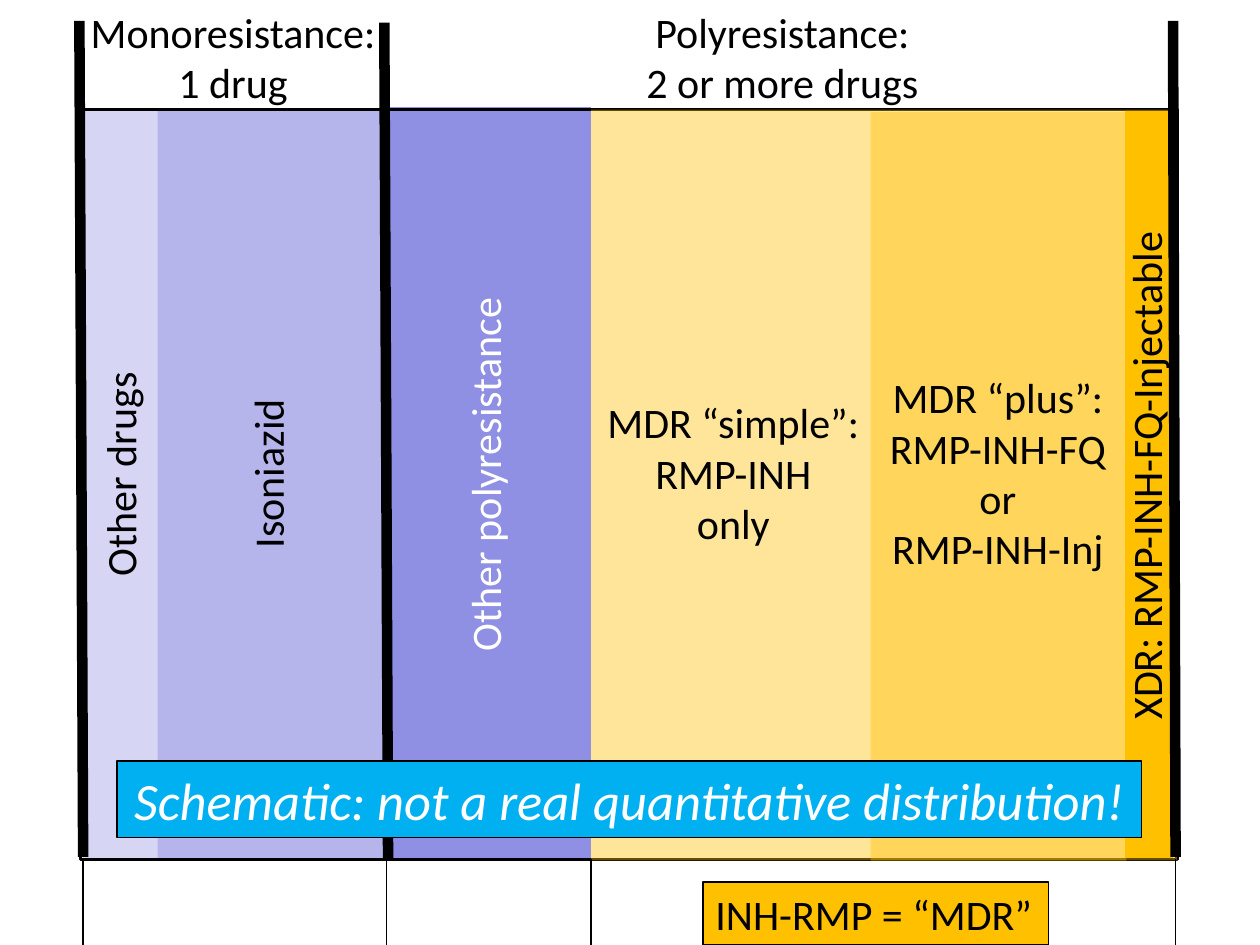
from dataclasses import dataclass

from lxml.etree import SubElement
from pptx import Presentation
from pptx.dml.color import RGBColor
from pptx.enum.shapes import MSO_CONNECTOR as Connector, MSO_SHAPE as Shape
from pptx.enum.text import MSO_AUTO_SIZE as AutoSize, PP_ALIGN as Align
from pptx.oxml.ns import qn
from pptx.util import Inches, Pt


@dataclass(frozen=True)
class Theme:
    font: str = "Calibri"
    body: int = 24
    banner: int = 30
    ink: str = "000000"
    light: str = "FFFFFF"
    violet: str = "3333CC"
    amber: str = "FFC000"
    sky: str = "00B0F0"
    hairline: float = 0.75
    frame: float = 2
    divider: float = 6


class Diagram:
    COLUMNS, ROWS = 100, 75

    def __init__(self, presentation, theme):
        self.theme = theme
        self.column = presentation.slide_width / self.COLUMNS
        self.row = presentation.slide_height / self.ROWS
        self.shapes = presentation.slides.add_slide(presentation.slide_layouts[6]).shapes

    def place(self, *lengths):
        units = (self.column, self.row) * 2
        return [round(length * unit) for length, unit in zip(lengths, units)]

    def block(self, box, fill=None, opacity=100, line=None):
        shape = self.shapes.add_shape(Shape.RECTANGLE, *self.place(*box))
        shape.shadow.inherit = False
        if fill:
            shape.fill.solid()
            shape.fill.fore_color.rgb = RGBColor.from_string(fill)
            if opacity < 100:
                color = shape._element.spPr.find(qn("a:solidFill"))[0]
                SubElement(color, qn("a:alpha"), val=str(opacity * 1000))
        else:
            shape.fill.background()
        if line:
            self.stroke(shape, line)
        else:
            shape.line.fill.background()
        return shape

    def stroke(self, shape, width):
        shape.line.color.rgb = RGBColor.from_string(self.theme.ink)
        shape.line.width = Pt(width)

    def rule(self, start, end, width):
        connector = self.shapes.add_connector(Connector.STRAIGHT, *self.place(*start, *end))
        self.stroke(connector, width)
        SubElement(connector._element.spPr, qn("a:effectLst"))

    def add_lines(self, shape, lines, align=Align.CENTER, color=None, size=None, italic=None):
        frame = shape.text_frame
        frame.word_wrap = False
        frame.auto_size = AutoSize.SHAPE_TO_FIT_TEXT
        for index, line in enumerate(lines):
            paragraph = frame.add_paragraph() if index else frame.paragraphs[0]
            paragraph.alignment = align
            run = paragraph.add_run()
            run.text = line
            run.font.name = self.theme.font
            run.font.size = Pt(size or self.theme.body)
            run.font.italic = italic
            run.font.color.rgb = RGBColor.from_string(color or self.theme.ink)

    def label(self, box, *lines):
        self.add_lines(self.shapes.add_textbox(*self.place(*box)), lines)

    def upright(self, center, length, text, color=None):
        height = 5
        box = center - length / 2, (self.ROWS - height) / 2, length, height
        shape = self.shapes.add_textbox(*self.place(*box))
        shape.rotation = 270
        self.add_lines(shape, [text], Align.LEFT, color)

    def caption(self, box, text, fill, align, **style):
        shape = self.block(box, fill, line=self.theme.hairline)
        self.add_lines(shape, [text], align, **style)


def main():
    presentation = Presentation()
    presentation.slide_width, presentation.slide_height = Inches(10), Inches(7.5)
    theme = Theme()
    diagram = Diagram(presentation, theme)
    bottom = 68.2

    diagram.block((6.6, 8.8, 24, 59.5), theme.violet, 20)
    diagram.block((30.5, 8.5, 16.4, 59.6), theme.violet, 55)
    diagram.block((12.5, 8.6, 17.9, 59.5), theme.violet, 20)
    diagram.block((6.4, 8.7, 87, 59.5), line=theme.frame)
    diagram.rule((30.5, 1.8), (30.8, bottom), theme.divider)

    diagram.label((6.1, 0, 24.8, 9.1), "Monoresistance:", "1 drug")
    diagram.label((50.2, 0, 23.8, 9.1), "Polyresistance:", "2 or more drugs")
    diagram.upright(21.2, 14, "Isoniazid")
    diagram.upright(9.5, 18.4, "Other drugs")

    diagram.block((46.9, 8.7, 46.5, 59.6), theme.amber, 40)
    diagram.block((69.1, 8.9, 20.3, 59.4), theme.amber, 40)
    diagram.block((89.3, 8.8, 3.8, 59.3), theme.amber)
    diagram.upright(38.45, 30.3, "Other polyresistance", theme.light)
    diagram.caption((55.8, 70, 27.4, 5), "INH-RMP = “MDR”", theme.amber, Align.LEFT)

    for top, foot in ((6.3, 6.6), (93.1, 93.3)):
        diagram.rule((top, 1.65), (foot, 68), theme.divider)
    diagram.label((47.1, 31, 22.2, 13.1), "MDR “simple”:", "RMP-INH", "only")
    diagram.upright(90.9, 41.2, "XDR: RMP-INH-FQ-Injectable")
    for column in (6.6, 30.65, 46.9, 93.3):
        diagram.rule((column, bottom), (column, diagram.ROWS), theme.hairline)
    diagram.label((69.5, 29, 19.4, 17.2), "MDR “plus”:", "RMP-INH-FQ", "or", "RMP-INH-Inj")
    diagram.caption((9.3, 60.4, 81.3, 6.1), "Schematic: not a real quantitative distribution!",
                    theme.sky, Align.CENTER, color=theme.light, size=theme.banner, italic=True)

    presentation.save("out.pptx")


if __name__ == "__main__":
    main()
